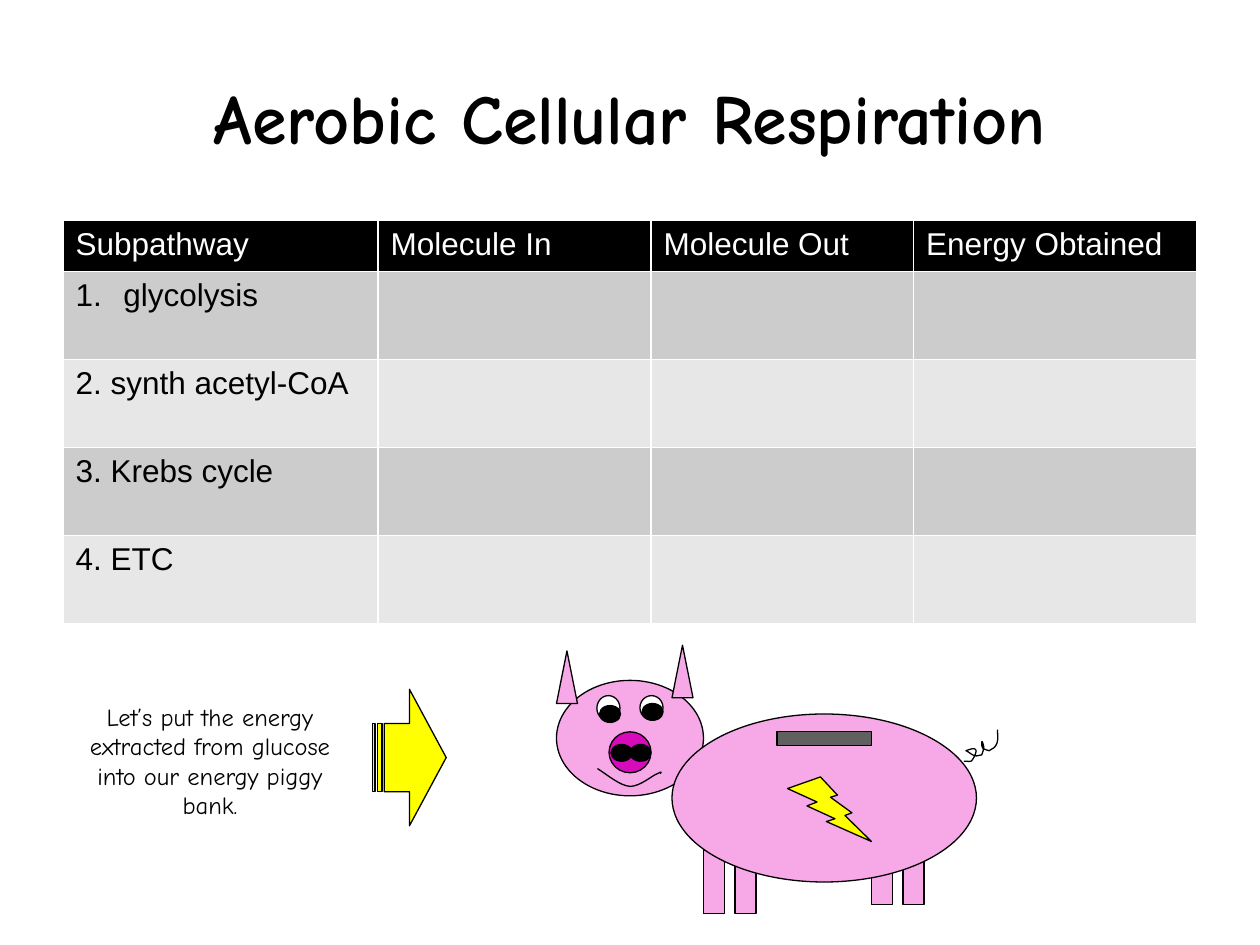
from lxml.etree import SubElement
from pptx import Presentation
from pptx.dml.color import RGBColor
from pptx.enum.shapes import MSO_SHAPE
from pptx.enum.text import MSO_ANCHOR, PP_ALIGN
from pptx.oxml import parse_xml
from pptx.oxml.ns import nsdecls, qn
from pptx.util import Inches, Pt

BLACK, WHITE, PINK, YELLOW = "000000", "FFFFFF", "F6A8E7", "FFFF00"


def color(value):
    return RGBColor.from_string(value)


class Deck:
    columns, rows = 120, 90
    hand, plain = "Comic Neue", "Arial"

    def __init__(self):
        self.prs = Presentation()
        self.prs.slide_width, self.prs.slide_height = Inches(10), Inches(7.5)
        self.s = self.prs.slides.add_slide(self.prs.slide_layouts[6])

    def x(self, n):
        return round(self.prs.slide_width * n / self.columns)

    def y(self, n):
        return round(self.prs.slide_height * n / self.rows)

    def box(self, left, top, width, height):
        return self.x(left), self.y(top), self.x(width), self.y(height)

    def style(self, p, font, size, fill, bold=False):
        for r in p.runs:
            r.font.name, r.font.size, r.font.bold = font, Pt(size), bold
            r.font.color.rgb = color(fill)

    def text(self, words, at, size, bold=False, anchor=MSO_ANCHOR.TOP):
        tf = self.s.shapes.add_textbox(*self.box(*at)).text_frame
        tf.word_wrap = True
        tf.vertical_anchor = anchor
        tf.text = words
        p = tf.paragraphs[0]
        p.alignment = PP_ALIGN.CENTER
        self.style(p, self.hand, size, BLACK, bold)

    def outline(self, sp):
        sp.shadow.inherit = False
        sp.line.color.rgb = color(BLACK)
        sp.line.width = Pt(0.75)

    def shape(self, kind, at, fill):
        sp = self.s.shapes.add_shape(kind, *self.box(*at))
        sp.fill.solid()
        sp.fill.fore_color.rgb = color(fill)
        self.outline(sp)

    def oval(self, at, fill):
        self.shape(MSO_SHAPE.OVAL, at, fill)

    def curve(self, *points):
        start, *controls = [(self.x(h), self.y(v)) for h, v in points]
        fb = self.s.shapes.build_freeform(*start)
        fb.add_line_segments(controls, close=False)
        sp = fb.convert_to_shape()
        outline = next(sp._element.iter(qn("a:path" )))
        lines = outline.findall(qn("a:lnTo"))
        for i in range(0, len(lines), 3):
            bezier = SubElement(outline, qn("a:cubicBezTo"))
            for line in lines[i:i + 3]:
                bezier.append(line[0])
                outline.remove(line)
        sp.fill.background()
        self.outline(sp)

    def border(self, cell):
        tcPr = cell._tc.get_or_add_tcPr()
        for i, side in enumerate("LRTB"):
            tcPr.insert(i, parse_xml(
                f'<a:ln{side} {nsdecls("a")} w="12700"><a:solidFill>'
                f'<a:srgbClr val="{WHITE}"/></a:solidFill></a:ln{side}>'))

    def number(self, p):
        pPr = p._p.get_or_add_pPr()
        pPr.set("marL", str(Inches(0.38)))
        pPr.set("indent", str(-Inches(0.38)))
        SubElement(pPr, qn("a:buFont")).set("typeface", "+mj-lt")
        SubElement(pPr, qn("a:buAutoNum")).set("type", "arabicPeriod")

    def table(self, header, labels, at, widths, heights):
        frame = self.s.shapes.add_table(len(heights), len(widths), *self.box(*at))
        table = frame.table
        for column, width in zip(table.columns, widths):
            column.width = self.x(width)
        for i, (row, height) in enumerate(zip(table.rows, heights)):
            row.height = self.y(height)
            words = header if i == 0 else [labels[i - 1]] + [""] * (len(widths) - 1)
            fill = BLACK if i == 0 else ("E7E7E7", "CCCCCC")[i % 2]
            for cell, word in zip(row.cells, words):
                cell.fill.solid()
                cell.fill.fore_color.rgb = color(fill)
                self.border(cell)
                p = cell.text_frame.paragraphs[0]
                p.text = word
                self.style(p, self.plain, 18, BLACK if i else WHITE)
        return table


def draw_pig(deck):
    deck.oval((53, 64.8, 14, 11), PINK)
    deck.oval((58, 69.7, 4, 3.9), "D70BBA")
    for left, height in ((60.95, 2.3), (56.85, 2.4)):
        deck.oval((left, 66.25, 2.2, height), WHITE)
    for left, top in ((67, 81), (70, 81), (86, 80.15), (83, 80.15)):
        deck.shape(MSO_SHAPE.RECTANGLE, (left, top, 2, 6), PINK)
    deck.curve(
        (91.8, 72.5),
        (92.2, 72.5), (92.5, 72.6), (92.6, 72.4),
        (93.6, 70.8), (92.3, 71.4), (92, 71.5),
        (92.3, 71.6), (92.6, 72), (93, 72),
        (93.1, 72), (93.4, 71.9), (93.5, 71.9),
        (93.6, 71.6), (93.7, 71.4), (93.7, 71.2),
        (93.7, 71), (93.5, 70.4), (93.5, 70.7),
        (93.5, 71.4), (93.6, 71.3), (94.2, 71.5),
        (94.3, 71.4), (94.6, 71.3), (94.7, 71.2),
        (95.2, 70.6), (95, 70.2), (95, 69.5))
    deck.oval((64, 68, 29, 16), PINK)
    for left, top in ((53, 62), (64, 61.45)):
        deck.shape(MSO_SHAPE.ISOSCELES_TRIANGLE, (left, top, 2, 5), PINK)
    deck.curve(
        (56.9, 73.2),
        (58, 73.9), (59, 74.8), (60, 74.9),
        (61, 74.9), (62.2, 73.8), (62.6, 73.7),
        (63.1, 73.4), (63, 73.6), (62.9, 73.7))
    nostrils = ((60, 70.9), (58.2, 70.9))
    pupils = ((57.1, 67.2), (61.15, 67))
    for left, top in nostrils + pupils:
        deck.oval((left, top, 2, 1.6), BLACK)
    deck.shape(MSO_SHAPE.RECTANGLE, (74, 69.7, 9, 1.3), "606060")


def main():
    deck = Deck()
    deck.text("Aerobic Cellular Respiration", (6, 3.6, 108, 15), 40, True,
              MSO_ANCHOR.MIDDLE)
    table = deck.table(
        ["Subpathway", "Molecule In", "Molecule Out", "Energy Obtained"],
        ["glycolysis", "2. synth acetyl-CoA", "3. Krebs cycle", "4. ETC"],
        (6, 21, 108, 38.4), (30, 26, 25, 27), [4.85] + [8.39] * 4)
    deck.number(table.cell(1, 0).text_frame.paragraphs[0])
    draw_pig(deck)
    deck.text("Let’s put the energy extracted from glucose into our energy "
              "piggy bank.", (6, 66.25, 28, 12.6), 14)
    deck.shape(MSO_SHAPE.STRIPED_RIGHT_ARROW, (35.5, 65.65, 7, 13), YELLOW)
    deck.shape(MSO_SHAPE.LIGHTNING_BOLT, (75, 74, 8, 6.15), YELLOW)
    deck.prs.save("out.pptx")


if __name__ == "__main__":
    main()
